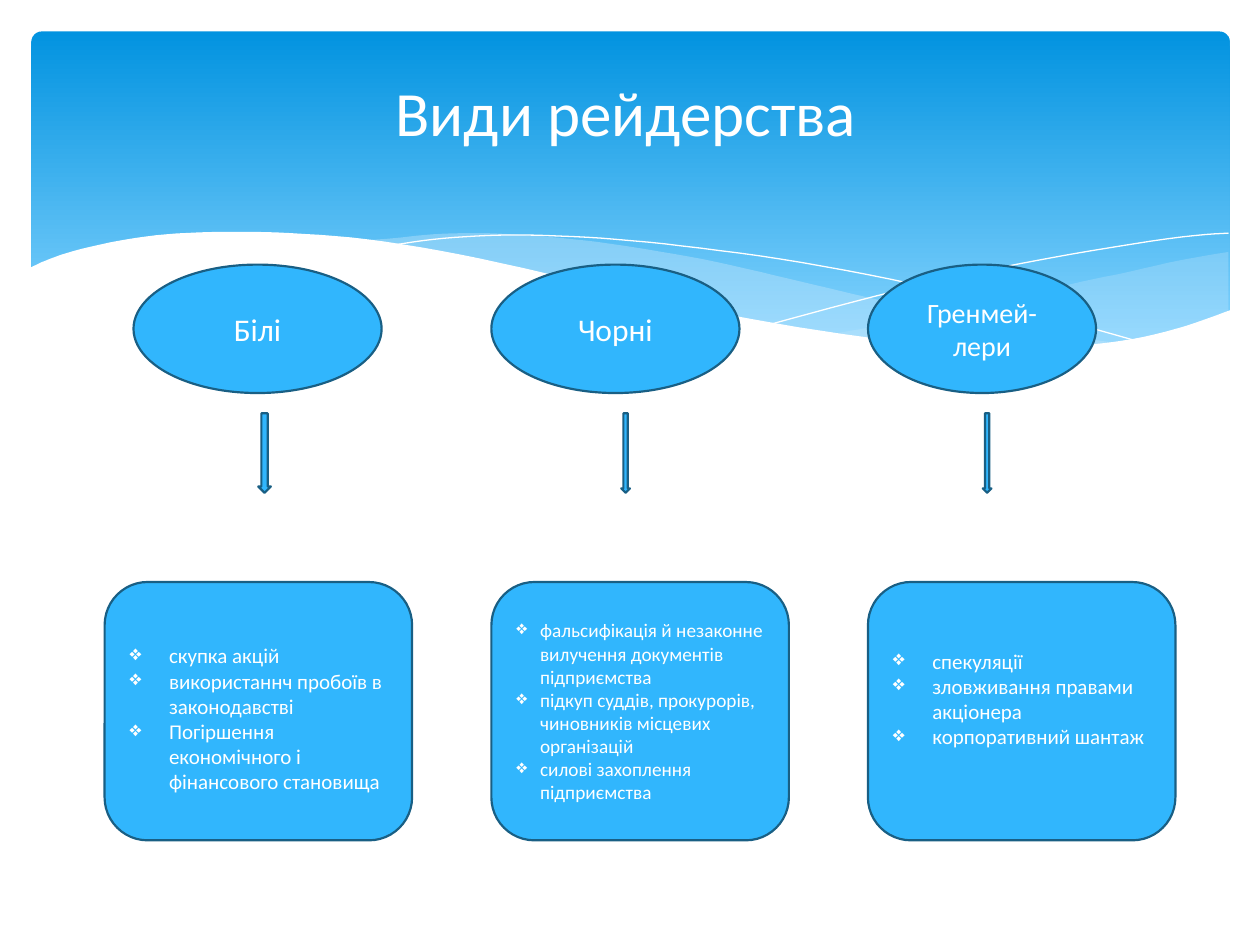
"""Build a slide on the three kinds of corporate raiding."""
from lxml import etree
from pptx import Presentation
from pptx.dml.color import RGBColor
from pptx.enum.shapes import MSO_SHAPE
from pptx.enum.text import MSO_ANCHOR, PP_ALIGN
from pptx.oxml.ns import qn
from pptx.util import Pt

OVAL, ARROW, ROUND = MSO_SHAPE.OVAL, MSO_SHAPE.DOWN_ARROW, MSO_SHAPE.ROUNDED_RECTANGLE
LEFT, CENTER, MIDDLE = PP_ALIGN.LEFT, PP_ALIGN.CENTER, MSO_ANCHOR.MIDDLE
WHITE = RGBColor(0xFF, 0xFF, 0xFF)
BLUE = RGBColor(0x31, 0xB6, 0xFD)
NAVY = RGBColor(0x19, 0x5F, 0x84)
PALE = RGBColor(0xC6, 0xE7, 0xFC)
DEEP = RGBColor(0x02, 0x93, 0xE0)
SKY = RGBColor(0x83, 0xD3, 0xFE)
FACE = "Calibri"

TITLE = "Види рейдерства"
KINDS = [
    dict(name="Білі", size=18, oval=(76.3, 141.8), arrow=(147.6, 7.2), card=(59.8, 175.7),
         text=12, indent=22.5, inset=dict(margin_top=12),
         items=["скупка акцій", "використаннч пробоїв в законодавстві",
                "Погіршення економічного і фінансового становища"]),
    dict(name="Чорні", size=18, oval=(280.8, 141.8), arrow=(355, 5), card=(280.8, 170),
         text=11, indent=13.5, inset={},
         items=["фальсифікація й незаконне вилучення документів підприємства",
                "підкуп суддів, прокурорів, чиновників місцевих організацій",
                "силові захоплення підприємства"]),
    dict(name="Гренмей-лери", size=16, oval=(496, 130.3), arrow=(561.6, 5), card=(496, 175.7),
         text=12, indent=22.5, inset=dict(margin_bottom=18),
         items=["спекуляції", "зловживання правами акціонера", "корпоративний шантаж"]),
]
ROWS = dict(oval=(151.2, 73.4), arrow=(236.2, 45.4), card=(332.6, 147.6))

RIGHT = [
    [(702, 144), (673.2, 149), (641.5, 156.2), (619.9, 160.6), (560.9, 174.2),
     (508.3, 185), (475.9, 190.8)],
    [(475.9, 190.8), (507.6, 195.1), (545, 198.7), (586.1, 199.9), (621.4, 198.7),
     (651.6, 193.7), (678.2, 186.5), (702, 177.8)],
]
MID = [
    [(642.9, 196.6), (602.6, 191), (558, 182.9), (508.3, 172.8), (452.9, 159.8),
     (409.7, 149.8), (370.1, 142.6), (334.8, 137.5), (302.4, 134.6), (273.6, 133.2),
     (247.7, 133.9), (225.4, 136.1), (205.9, 137.5)],
    [(205.9, 137.5), (246.2, 143.3), (290.9, 151.9), (323.3, 159.8), (381.6, 172.8),
     (432.7, 183.6), (478.8, 191.5), (520, 197.3), (556.6, 199.4), (589, 200.2),
     (624.2, 199.4), (642.9, 196.6)],
]
FALL = [[(222.5, 140.4), (247.7, 136.8), (278.6, 134.6), (311.8, 134.6), (352.1, 136.8),
         (400.3, 141.8), (457.9, 150), (523.4, 162.7), (598.3, 180.7), (653, 195.8)]]
RISE = [[(441.4, 185), (500.4, 169.2), (558.7, 155.5), (623.5, 143.3), (675.4, 135.4),
         (702, 133.2)]]
FRONT = [
    [(703.4, 177.1), (676.8, 186.5), (647.3, 193.7), (612, 198), (582.5, 199.4),
     (535.7, 197.3), (481, 190.8), (416.9, 180), (362.2, 167.8), (321.8, 158.4),
     (262.8, 145.4), (210.2, 136.8), (165.6, 133.2), (127.4, 132.5), (95, 133.9),
     (68.4, 137.5), (42.5, 143.3), (25.9, 149), (16.6, 153.4)],
    [(16.6, 236.9), (703.4, 236.9)],
]
WAVES = [(RIGHT, PALE, 29), (MID, PALE, 40), (FALL, None, 0), (RISE, None, 0), (FRONT, WHITE, 100)]


def smooth(knots, steps=5):
    """Return points on a Catmull-Rom curve through the knots."""
    ends = [knots[0], *knots, knots[-1]]
    points = [knots[0]]
    for quad in zip(ends, ends[1:], ends[2:], ends[3:]):
        for step in range(1, steps + 1):
            t = step / steps
            points.append(tuple(
                b + t * (c - a) / 2 + t**2 * (2*a - 5*b + 4*c - d) / 2
                + t**3 * (3*b - a - 3*c + d) / 2 for a, b, c, d in zip(*quad)))
    return points


def wave(shapes, curves, color, alpha):
    """Draw a filled wave, or a white hairline when no color is given."""
    points = [(x * 10, y * 10) for curve in curves
              for x, y in (smooth(curve) if len(curve) > 2 else curve)]
    form = shapes.build_freeform(*points[0], scale=Pt(1) / 10)
    form.add_line_segments(points[1:], close=color is not None)
    shape = form.convert_to_shape()
    shape.shadow.inherit = False
    if color is None:
        shape.fill.background()
        shape.line.color.rgb = WHITE
        shape.line.width = Pt(0)
        return
    shape.fill.solid()
    shape.fill.fore_color.rgb = color
    shape.line.fill.background()
    if alpha < 100:
        tone = shape.fill._xPr.find(".//" + qn("a:srgbClr"))
        etree.SubElement(tone, qn("a:alpha"), val=str(alpha * 1000))


def banner(shapes):
    """Draw the gradient panel behind the title."""
    shape = shapes.add_shape(ROUND, Pt(18), Pt(18), Pt(684.7), Pt(194.4))
    shape.adjustments[0] = 0.03
    shape.shadow.inherit = False
    shape.line.fill.background()
    shape.fill.gradient()
    shape.fill.gradient_angle = 270
    for stop, color, place in zip(shape.fill.gradient_stops, (DEEP, SKY), (0, 0.9)):
        stop.color.rgb = color
        stop.position = place


def block(shapes, form, part, kind):
    """Draw one blue shape in its row."""
    left, width = kind[part]
    top, height = ROWS[part]
    shape = shapes.add_shape(form, Pt(left), Pt(top), Pt(width), Pt(height))
    shape.shadow.inherit = False
    shape.fill.solid()
    shape.fill.fore_color.rgb = BLUE
    shape.line.color.rgb = NAVY
    shape.line.width = Pt(1.25)
    return shape


def write(shape, lines, size, align=CENTER, indent=0):
    """Fill a shape with paragraphs, bulleted when indented."""
    frame = shape.text_frame
    frame.word_wrap = True
    frame.vertical_anchor = MIDDLE
    frame.text = "\n".join(lines)
    for para in frame.paragraphs:
        para.alignment = align
        para.font.color.rgb = WHITE
        for key, value in dict(name=FACE, size=Pt(size)).items():
            setattr(para.runs[0].font, key, value)
        para.runs[0].font.color.rgb = WHITE
        if indent:
            props = para._p.get_or_add_pPr()
            props.set("marL", str(Pt(indent)))
            props.set("indent", str(-Pt(indent)))
            mark = etree.Element(qn("a:buChar"), char="❖")
            props.insert(0, mark)


def main():
    """Assemble and save the slide."""
    deck = Presentation()
    deck.slide_width, deck.slide_height = Pt(720), Pt(540)
    slide = deck.slides.add_slide(deck.slide_layouts[5])
    shapes = slide.shapes
    banner(shapes)
    for curves, color, alpha in WAVES:
        wave(shapes, curves, color, alpha)
    title = shapes.title
    shapes._spTree.append(title._element)
    for key, value in dict(left=33.8, top=37.4, width=648, height=52.6).items():
        setattr(title, key, Pt(value))
    write(title, [TITLE], 36)
    for kind in KINDS:
        write(block(shapes, OVAL, "oval", kind), [kind["name"]], kind["size"])
        block(shapes, ARROW, "arrow", kind)
        card = block(shapes, ROUND, "card", kind)
        write(card, kind["items"], kind["text"], LEFT, kind["indent"])
        for key, value in kind["inset"].items():
            setattr(card.text_frame, key, Pt(value))
    deck.save("out.pptx")


if __name__ == "__main__":
    main()
